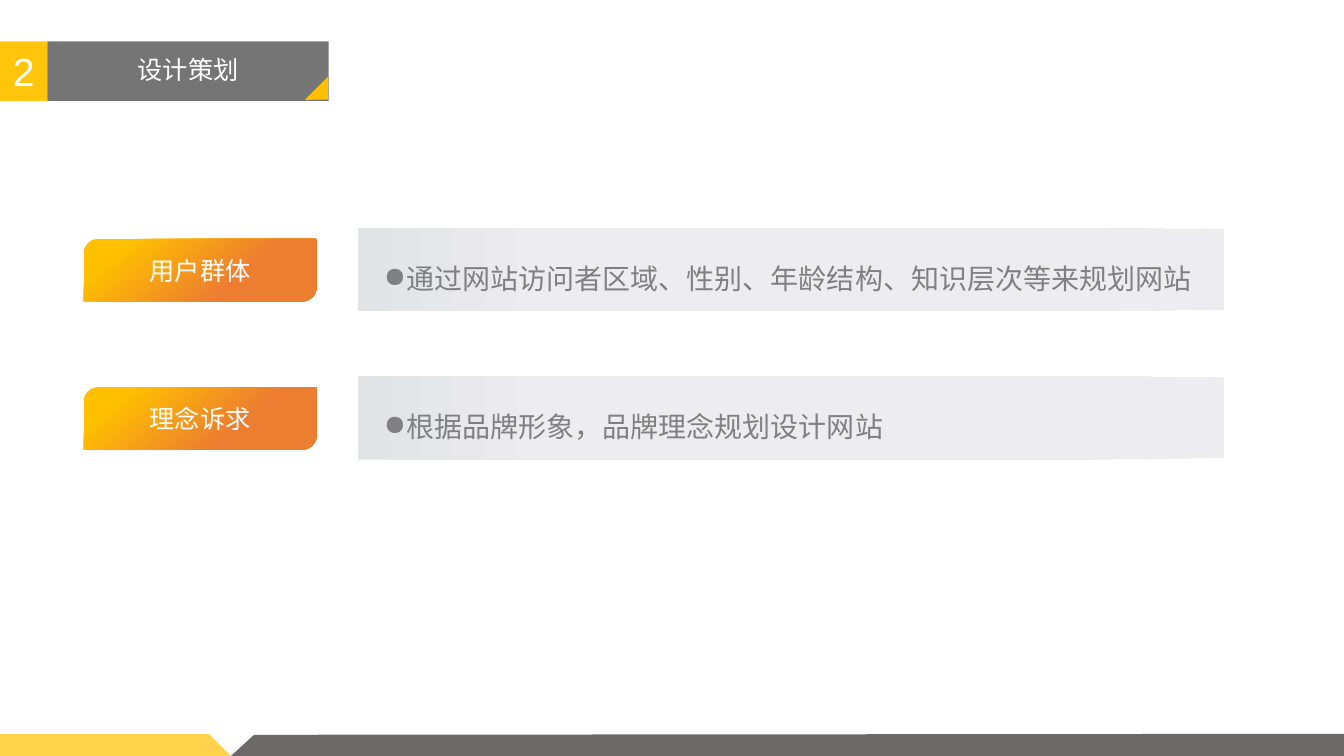
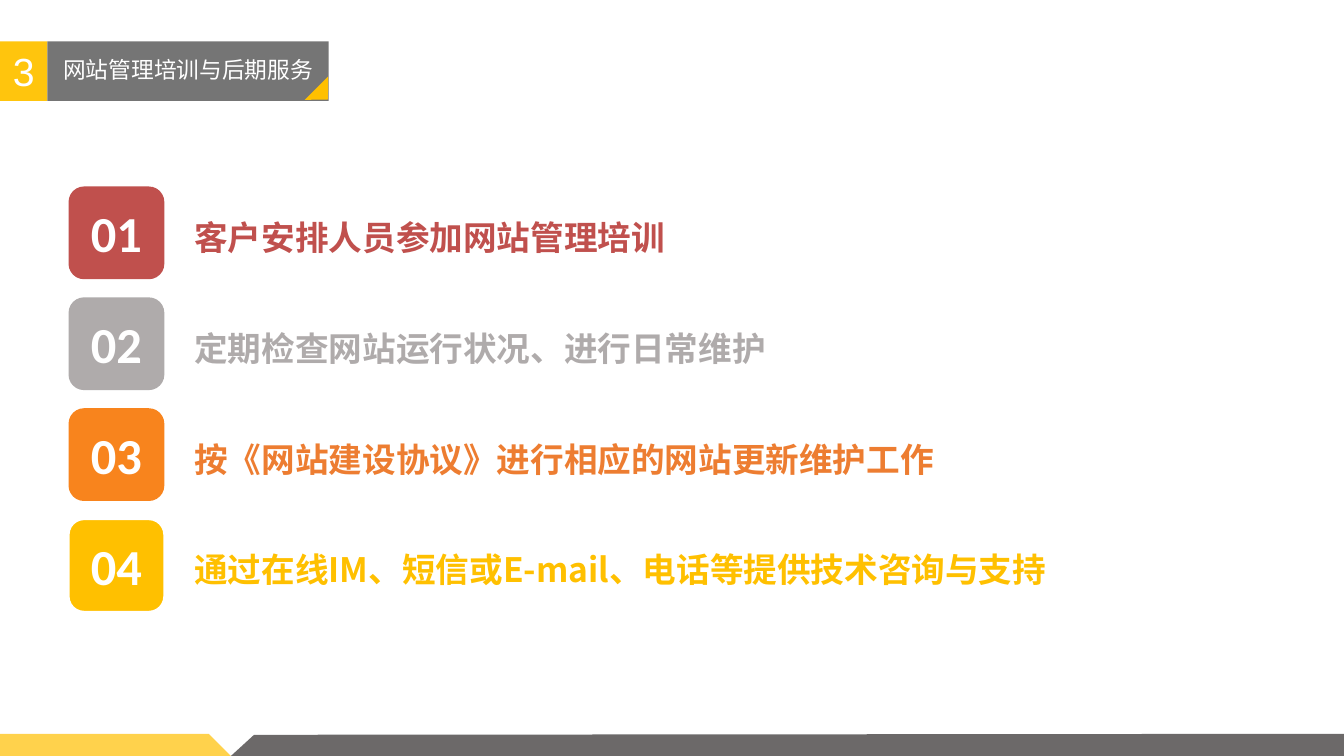
from lxml.etree import SubElement
from pptx import Presentation
from pptx.dml.color import RGBColor
from pptx.enum.shapes import MSO_SHAPE
from pptx.enum.text import MSO_ANCHOR, PP_ALIGN
from pptx.oxml.ns import qn
from pptx.util import Pt

PX = 9144
WIDTH, HEIGHT = 1333, 750
BLANK = 6
RECTANGLE = MSO_SHAPE.RECTANGLE
TRIANGLE = MSO_SHAPE.ISOSCELES_TRIANGLE
ROUNDED = MSO_SHAPE.ROUNDED_RECTANGLE
LEAF = MSO_SHAPE.ROUND_2_DIAG_RECTANGLE
LEFT, CENTER = PP_ALIGN.LEFT, PP_ALIGN.CENTER
TOP, MIDDLE = MSO_ANCHOR.TOP, MSO_ANCHOR.MIDDLE
CJK, NUMBER, BADGE = "Noto Sans CJK SC", "Arial", "Calibri"

COLORS = {
    "white": "FFFFFF",
    "gold": "FFC50D",
    "amber": "FFC000",
    "orange": "ED7D31",
    "bright orange": "F8841D",
    "red": "C0504D",
    "silver": "AFABAB",
    "title gray": "757575",
    "text gray": "808080",
    "charcoal": "3B3838",
    "band start": "E2E3E5",
    "band end": "EDEDEF",
}

TOPICS = [
    ("用户群体", "通过网站访问者区域、性别、年龄结构、知识层次等来规划网站"),
    ("理念诉求", "根据品牌形象，品牌理念规划设计网站"),
]
SERVICES = [
    ("客户安排人员参加网站管理培训", "red", "red"),
    ("定期检查网站运行状况、进行日常维护", "silver", "silver"),
    ("按《网站建设协议》进行相应的网站更新维护工作", "bright orange", "orange"),
    ("通过在线IM、短信或E-mail、电话等提供技术咨询与支持", "amber", "amber"),
]


def rgb(name):
    """Return the named colour."""
    return RGBColor.from_string(COLORS[name])


def paint(shape, color, alpha=100):
    """Give a shape a flat fill, with no line or shadow."""
    shape.shadow.inherit = False
    shape.line.fill.background()
    shape.fill.solid()
    shape.fill.fore_color.rgb = rgb(color)
    if alpha < 100:
        tint = shape.fill._xPr.find(qn("a:solidFill"))[0]
        SubElement(tint, qn("a:alpha"), val=str(alpha * 1000))


def shade(shape, stops, angle=0):
    """Give a shape a gradient of two (position, colour) stops."""
    shape.fill.gradient()
    shape.fill.gradient_angle = angle
    for stop, (position, color) in zip(shape.fill.gradient_stops, stops):
        stop.position = position
        stop.color.rgb = rgb(color)


def add_block(page, kind, bounds, color):
    """Add a flat preset shape."""
    block = page.shapes.add_shape(kind, *(length * PX for length in bounds))
    paint(block, color)
    return block


def add_outline(page, points, color, alpha=100):
    """Add a flat closed polygon."""
    builder = page.shapes.build_freeform(*points[0], scale=PX)
    builder.add_line_segments(points[1:], close=True)
    outline = builder.convert_to_shape()
    paint(outline, color, alpha)
    return outline


def write(shape, text, size, color="white", font=CJK, bold=False,
          align=CENTER, anchor=MIDDLE, spacing=1.0):
    """Write one styled paragraph into a shape."""
    frame = shape.text_frame
    frame.word_wrap = True
    frame.vertical_anchor = anchor
    para = frame.paragraphs[0]
    para.text = text
    para.alignment = align
    para.line_spacing = spacing
    para.font.size = Pt(size)
    para.font.bold = bold
    para.font.name = font
    para.font.color.rgb = rgb(color)
    defaults = para._p.get_or_add_pPr().find(qn("a:defRPr"))
    SubElement(defaults, qn("a:ea"), typeface=font)
    return para


def add_text(page, bounds, text, size, color, spacing, bold=False):
    """Add a left-aligned text box."""
    box = page.shapes.add_textbox(*(length * PX for length in bounds))
    return write(box, text, size, color, bold=bold, align=LEFT, anchor=TOP,
                 spacing=spacing)


def add_bullet(para, indent):
    """Put a round bullet in a hanging indent."""
    properties = para._p.get_or_add_pPr()
    properties.set("marL", str(indent * PX))
    properties.set("indent", str(-indent * PX))
    bullet = SubElement(properties, qn("a:buChar"), char="●")
    properties.find(qn("a:defRPr")).addprevious(bullet)


def add_page(deck, number, title, title_size):
    """Add a page with its numbered title and footer bands."""
    page = deck.slides.add_slide(deck.slide_layouts[BLANK])
    number_box = add_block(page, RECTANGLE, (0, 41, 47, 59), "gold")
    write(number_box, number, 28, font=NUMBER)
    title_box = add_block(page, RECTANGLE, (47, 41, 279, 59), "title gray")
    write(title_box, title, title_size, spacing=0.9)
    add_block(page, TRIANGLE, (303, 85, 33, 16), "amber").rotation = 135
    add_outline(page, [(0, 728), (207, 728), (229, HEIGHT), (0, HEIGHT)],
                "amber", 70)
    add_outline(page, [(229, HEIGHT), (252, 729), (WIDTH, 728),
                       (WIDTH, HEIGHT)], "charcoal", 75)
    return page


def add_topic(page, top, label, text):
    """Add a gradient label beside a gray band with a bulleted line."""
    band = add_outline(page, [(355, top), (1057, top), (1214, top + 2),
                              (1214, top + 81), (1057, top + 83),
                              (355, top + 83)], "band end")
    shade(band, [(0, "band start"), (0.22, "band end")])
    button = add_block(page, LEAF, (83, top + 11, 231, 62), "amber")
    button.adjustments[0] = 0.23
    shade(button, [(0.16, "amber"), (0.66, "orange")], angle=310)
    write(button, label, 18)
    para = add_text(page, (371, top + 12, 833, 60), text, 20, "text gray", 1.5)
    add_bullet(para, 19)


def add_service(page, top, number, text, badge_color, text_color):
    """Add a numbered badge with its line of text."""
    badge = add_block(page, ROUNDED, (68, top, 95, 92), badge_color)
    write(badge, f"{number:02}", 36, font=BADGE, bold=True)
    add_text(page, (183, top + 17, 1036, 58), text, 24, text_color, 1.2,
             bold=True)
    return badge


def main():
    """Build and save the deck."""
    deck = Presentation()
    deck.slide_width, deck.slide_height = WIDTH * PX, HEIGHT * PX

    page = add_page(deck, "2", "设计策划", 18)
    for index, (label, text) in enumerate(TOPICS):
        add_topic(page, 226 + 147 * index, label, text)

    page = add_page(deck, "3", "网站管理培训与后期服务", 16.2)
    for index, service in enumerate(SERVICES):
        badge = add_service(page, 185 + 110 * index, index + 1, *service)
    badge.line.color.rgb = rgb("white")
    badge.line.width = Pt(1.5)

    deck.save("out.pptx")


if __name__ == "__main__":
    main()
